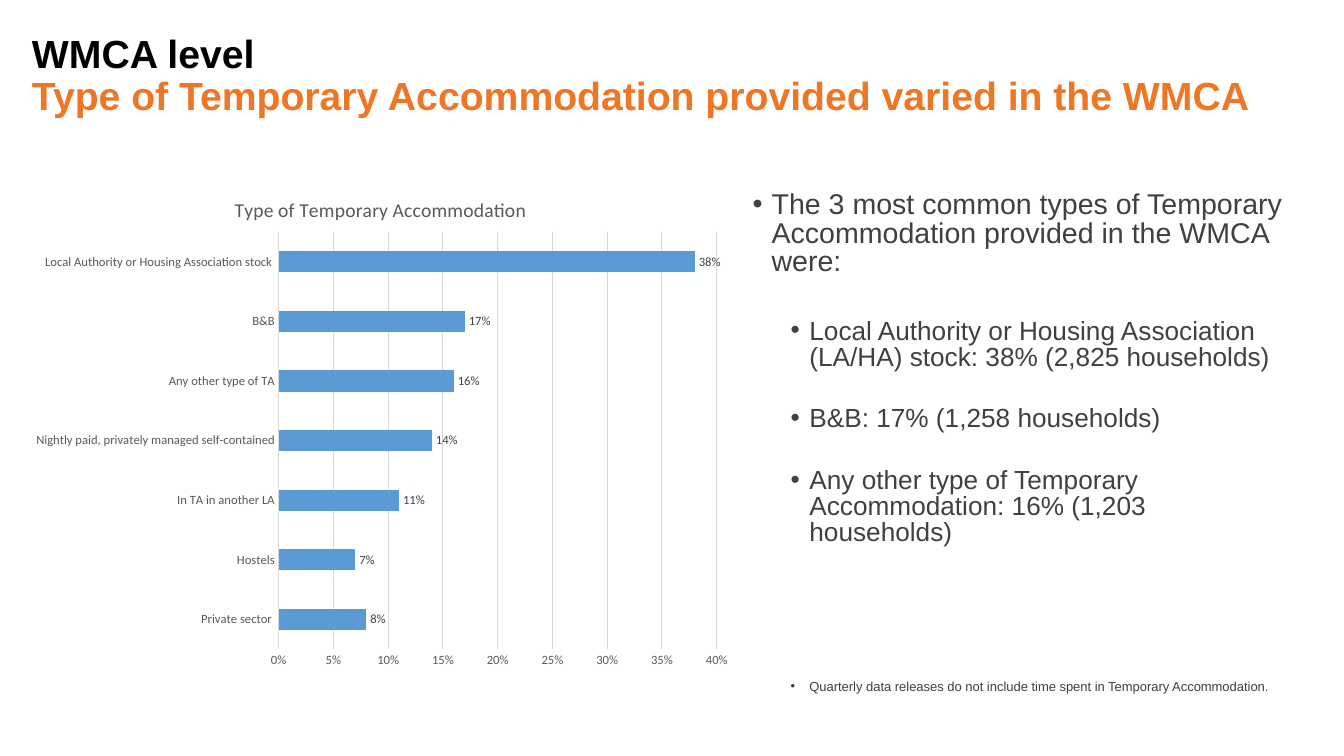
from lxml import etree
from pptx import Presentation
from pptx.chart.data import CategoryChartData
from pptx.dml.color import RGBColor
from pptx.enum.chart import XL_CHART_TYPE, XL_LABEL_POSITION, XL_TICK_MARK
from pptx.enum.text import MSO_ANCHOR
from pptx.oxml.ns import qn
from pptx.util import Pt

BAR_CLUSTERED = XL_CHART_TYPE.BAR_CLUSTERED
OUTSIDE_END = XL_LABEL_POSITION.OUTSIDE_END
NO_TICK = XL_TICK_MARK.NONE
MIDDLE = MSO_ANCHOR.MIDDLE

BLACK = RGBColor(0x00, 0x00, 0x00)
ORANGE = RGBColor(0xEE, 0x76, 0x24)
BLUE = RGBColor(0x5B, 0x9B, 0xD5)
DARK_GREY = RGBColor(0x40, 0x40, 0x40)
MID_GREY = RGBColor(0x59, 0x59, 0x59)
LIGHT_GREY = RGBColor(0xD9, 0xD9, 0xD9)

HEADING = ("WMCA level", "Type of Temporary Accommodation provided varied in the WMCA")

ACCOMMODATION = {
    "Private sector ": 0.08,
    "Hostels": 0.07,
    "In TA in another LA": 0.11,
    "Nightly paid, privately managed self-contained": 0.14,
    "Any other type of TA": 0.16,
    "B&B": 0.17,
    "Local Authority or Housing Association stock ": 0.38,
}

FINDINGS = [
    (0, 20.4, 0, "The 3 most common types of Temporary Accommodation provided in the WMCA were:"),
    (1, 18.7, 30, "Local Authority or Housing Association (LA/HA) stock: 38% (2,825 households)"),
    (1, 18.7, 25.4, "B&B: 17% (1,258 households)"),
    (1, 18.7, 25.4, "Any other type of Temporary Accommodation: 16% (1,203 households)"),
    (1, 9.3, 95.8, "Quarterly data releases do not include time spent in Temporary Accommodation."),
]


class SlideBuilder:
    text_font = "Arial"
    chart_font = "Calibri"
    bullet_hang = 13.5
    level_step = 27

    def __init__(self, slide):
        self.slide = slide

    def style(self, font, name, size, color, bold=False):
        font.name = name
        font.size = Pt(size)
        font.color.rgb = color
        font.bold = bold

    def text_frame(self, left, top, width, height):
        box = self.slide.shapes.add_textbox(Pt(left), Pt(top), Pt(width), Pt(height))
        box.text_frame.word_wrap = True
        return box.text_frame

    def heading(self, lines, colors, *place):
        frame = self.text_frame(*place)
        frame.vertical_anchor = MIDDLE
        paragraph = frame.paragraphs[0]
        paragraph.text = "\v".join(lines)
        paragraph.line_spacing = 0.9
        for run, color in zip(paragraph.runs, colors):
            self.style(run.font, self.text_font, 28, color, bold=True)

    def bullets(self, items, *place):
        frame = self.text_frame(*place)
        frame.text = "\n".join(text for *_, text in items)
        for paragraph, (level, size, gap, _) in zip(frame.paragraphs, items):
            paragraph.level = level
            properties = paragraph._p.get_or_add_pPr()
            properties.set("marL", str(Pt(self.bullet_hang + level * self.level_step)))
            properties.set("indent", str(Pt(-self.bullet_hang)))
            etree.SubElement(properties, qn("a:buFont"), typeface=self.text_font)
            etree.SubElement(properties, qn("a:buChar"), char="•")
            paragraph.line_spacing = 0.83
            paragraph.space_before = Pt(gap)
            self.style(paragraph.runs[0].font, self.text_font, size, DARK_GREY)

    def set_layout(self, parent, index, **settings):
        layout = parent.find(qn("c:layout"))
        if layout is None:
            layout = etree.Element(qn("c:layout"))
            parent.insert(index, layout)
        manual = etree.SubElement(layout, qn("c:manualLayout"))
        for name, value in settings.items():
            etree.SubElement(manual, qn(f"c:{name}"), val=str(value))

    def bar_chart(self, title, shares, *place):
        data = CategoryChartData(number_format="0%")
        data.categories = list(shares)
        data.add_series("Series 1", list(shares.values()))
        left, top, width, height = map(Pt, place)
        chart = self.slide.shapes.add_chart(
            BAR_CLUSTERED, left, top, width, height, data).chart
        self.style(chart.font, self.chart_font, 10, BLACK)
        chart.has_legend = False

        chart.chart_title.text_frame.text = title
        title_run = chart.chart_title.text_frame.paragraphs[0].runs[0]
        self.style(title_run.font, self.chart_font, 14, MID_GREY)
        self.set_layout(chart.chart_title._element, 1,
                        xMode="edge", yMode="edge", x=0.29, y=0.04)
        self.set_layout(chart._chartSpace.chart.plotArea, 0, layoutTarget="inner",
                        xMode="edge", yMode="edge", x=0.356, y=0.118, w=0.608, h=0.825)

        for axis in (chart.category_axis, chart.value_axis):
            axis.major_tick_mark = axis.minor_tick_mark = NO_TICK
            self.style(axis.tick_labels.font, self.chart_font, 9, MID_GREY)
        shares_axis = chart.value_axis
        shares_axis.minimum_scale = 0
        shares_axis.maximum_scale = 0.4
        shares_axis.major_unit = 0.05
        shares_axis.tick_labels.number_format = "0%"
        shares_axis.tick_labels.number_format_is_linked = False
        shares_axis.format.line.fill.background()
        for line in (chart.category_axis.format.line,
                     shares_axis.major_gridlines.format.line):
            line.color.rgb = LIGHT_GREY
            line.width = Pt(0.75)

        plot = chart.plots[0]
        plot.gap_width = 182
        plot.vary_by_categories = False
        bars = plot.series[0]
        bars.format.fill.solid()
        bars.format.fill.fore_color.rgb = BLUE
        labels = bars.data_labels
        labels.show_value = True
        labels.position = OUTSIDE_END
        labels.number_format = "0%"
        labels.number_format_is_linked = False
        self.style(labels.font, self.chart_font, 9, DARK_GREY)


def main():
    deck = Presentation()
    deck.slide_width = Pt(960)
    deck.slide_height = Pt(540)
    builder = SlideBuilder(deck.slides.add_slide(deck.slide_layouts[6]))
    builder.bullets(FINDINGS, 530.6, 133.6, 393.8, 361.4)
    builder.heading(HEADING, (BLACK, ORANGE), 15.8, 18.7, 938.2, 72.7)
    builder.bar_chart("Type of Temporary Accommodation", ACCOMMODATION,
                      15.8, 123.1, 514.8, 361.4)
    deck.save("out.pptx")


if __name__ == "__main__":
    main()
